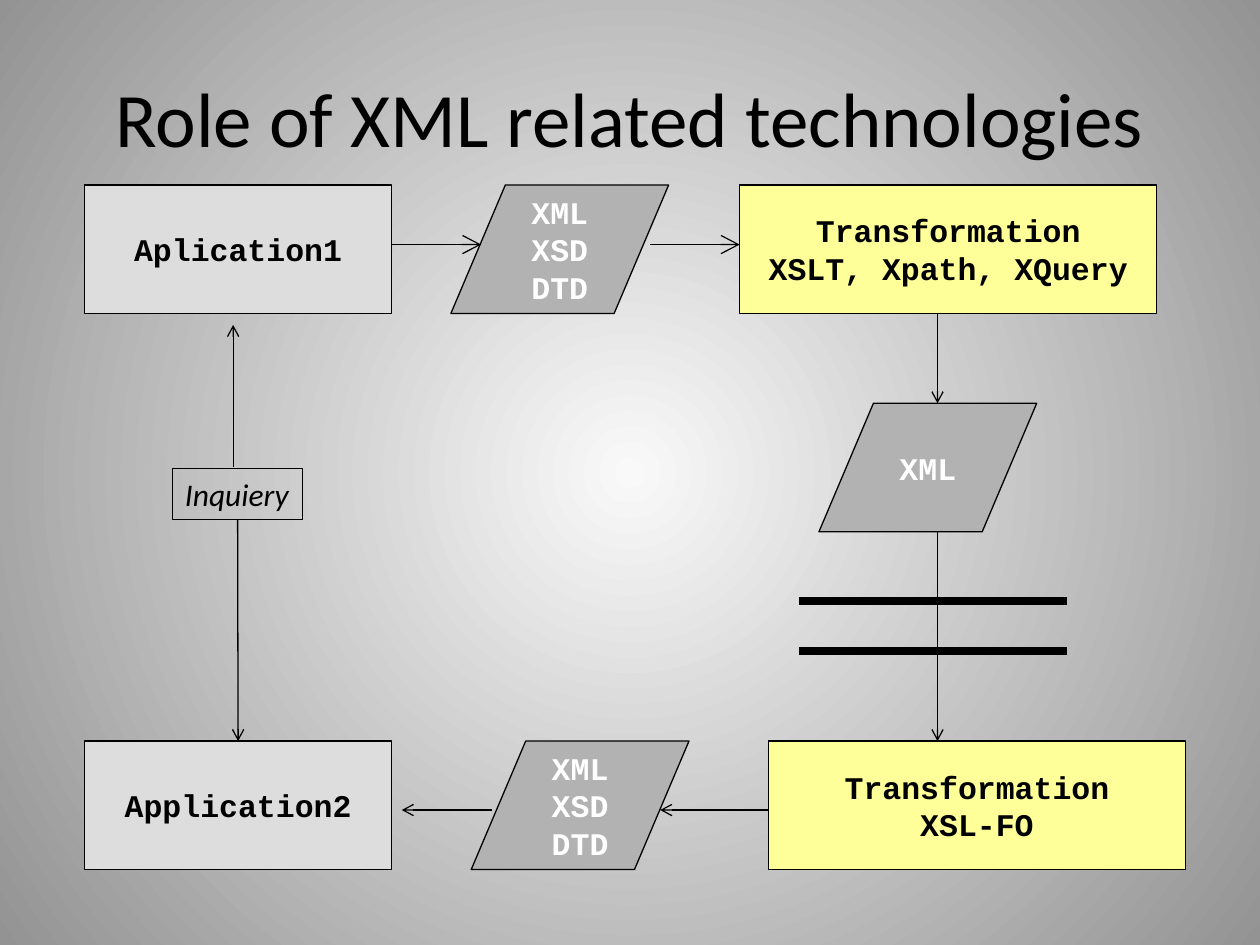
from lxml import etree
from pptx import Presentation
from pptx.dml.color import RGBColor
from pptx.enum.shapes import MSO_CONNECTOR, MSO_SHAPE
from pptx.enum.text import MSO_ANCHOR, MSO_AUTO_SIZE, PP_ALIGN
from pptx.oxml.ns import qn
from pptx.util import Cm, Pt

RECTANGLE = MSO_SHAPE.RECTANGLE
PARALLELOGRAM = MSO_SHAPE.PARALLELOGRAM
STRAIGHT = MSO_CONNECTOR.STRAIGHT
MIDDLE, TOP = MSO_ANCHOR.MIDDLE, MSO_ANCHOR.TOP
CENTER, LEFT = PP_ALIGN.CENTER, PP_ALIGN.LEFT
FIT_SHAPE = MSO_AUTO_SIZE.SHAPE_TO_FIT_TEXT

BLACK, WHITE = "000000", "FFFFFF"
APPLICATION_GRAY, DATA_GRAY, TRANSFORM_YELLOW = "DDDDDD", "B2B2B2", "FFFF99"
THIN, THICK = 0.75, 4.5

# Lengths in centimetres
NODE_HEIGHT = 2.59
APPLICATION_WIDTH, DATA_WIDTH, TRANSFORM_WIDTH = 6.2, 4.39, 8.41
APPLICATION_LEFT = 1.7
TOP_ROW, DATA_ROW, BOTTOM_ROW = 3.73, 8.13, 14.94
TOP_FLOW, BOTTOM_FLOW, DOWN_FLOW = 4.93, 16.33, 18.9


def rgb(value):
    return RGBColor.from_string(value)


def format_text(frame, font, size, color, align, anchor, bold=False, italic=False):
    frame.vertical_anchor = anchor
    for paragraph in frame.paragraphs:
        paragraph.alignment = align
        for run in paragraph.runs:
            run.font.name = font
            run.font.size = Pt(size)
            run.font.bold = bold
            run.font.italic = italic
            run.font.color.rgb = rgb(color)


def set_background(slide, center, edge):
    """Circular gradient running from the middle of the slide outwards."""
    fill = slide.background.fill
    fill.gradient()
    for stop, color, position in zip(fill.gradient_stops, (center, edge), (0, 1)):
        stop.color.rgb = rgb(color)
        stop.position = position
    gradient = slide.element.find(".//" + qn("a:gradFill"))
    gradient.remove(gradient.find(qn("a:lin")))
    path = etree.SubElement(gradient, qn("a:path"), path="circle")
    etree.SubElement(path, qn("a:fillToRect"), l="50000", t="50000", r="50000", b="50000")


def set_title(slide, text):
    title = slide.shapes.title
    title.left, title.top = Cm(1.27), Cm(0.76)
    title.width, title.height = Cm(22.86), Cm(3.18)
    title.text_frame.text = text
    format_text(title.text_frame, "Calibri", 44, BLACK, CENTER, MIDDLE)


def add_box(slide, geometry, left, top, width, height, text, fill=None):
    box = slide.shapes.add_shape(geometry, Cm(left), Cm(top), Cm(width), Cm(height))
    box.shadow.inherit = False
    if fill:
        box.fill.solid()
        box.fill.fore_color.rgb = rgb(fill)
    else:
        box.fill.background()
    box.line.color.rgb = rgb(BLACK)
    box.line.width = Pt(THIN)
    box.text_frame.word_wrap = False
    box.text_frame.text = text
    return box


def add_node(slide, geometry, left, top, width, text, fill, color=BLACK):
    node = add_box(slide, geometry, left, top, width, NODE_HEIGHT, text, fill)
    format_text(node.text_frame, "Courier New", 18, color, CENTER, MIDDLE, bold=True)
    return node


def add_application(slide, top, text):
    return add_node(slide, RECTANGLE, APPLICATION_LEFT, top, APPLICATION_WIDTH,
                    text, APPLICATION_GRAY)


def add_transformation(slide, left, top, text):
    add_node(slide, RECTANGLE, left, top, TRANSFORM_WIDTH, text, TRANSFORM_YELLOW)


def add_data(slide, left, top, text):
    data = add_node(slide, PARALLELOGRAM, left, top, DATA_WIDTH, text, DATA_GRAY, WHITE)
    data.adjustments[0] = 0.424


def add_inquiry(slide):
    inquiry = add_box(slide, RECTANGLE, 3.48, 9.45, 2.62, 1.02, "Inquiery")
    inquiry.text_frame.auto_size = FIT_SHAPE
    format_text(inquiry.text_frame, "Calibri", 18, BLACK, LEFT, TOP, italic=True)
    return inquiry


def add_line(slide, x1, y1, x2, y2, width=THIN):
    line = slide.shapes.add_connector(STRAIGHT, Cm(x1), Cm(y1), Cm(x2), Cm(y2))
    line.line.color.rgb = rgb(BLACK)
    line.line.width = Pt(width)
    etree.SubElement(line.element.spPr, qn("a:effectLst"))
    return line


def add_arrow(slide, x1, y1, x2, y2, head="med"):
    arrow = add_line(slide, x1, y1, x2, y2)
    outline = arrow.element.spPr.find(qn("a:ln"))
    etree.SubElement(outline, qn("a:tailEnd"), type="arrow", w=head, len=head)
    return arrow


def main():
    prs = Presentation()
    prs.slide_width, prs.slide_height = Cm(25.4), Cm(19.05)
    slide = prs.slides.add_slide(prs.slide_layouts[5])
    set_background(slide, "F9F9F9", "939393")
    set_title(slide, "Role of XML related technologies")

    # Top row: first application to transformation
    add_application(slide, TOP_ROW, "Aplication1")
    add_data(slide, 9.09, TOP_ROW, "XML\nXSD\nDTD")
    add_transformation(slide, 14.91, TOP_ROW, "Transformation\nXSLT, Xpath, XQuery")
    for start, end in ((7.9, 9.7), (13.11, 14.91)):
        add_arrow(slide, start, TOP_FLOW, end, TOP_FLOW, head="lg")

    # Right side: XML passes down through the double bar
    add_data(slide, 16.51, DATA_ROW, "XML")
    add_arrow(slide, DOWN_FLOW, TOP_ROW + NODE_HEIGHT, DOWN_FLOW, DATA_ROW)
    for bar in (12.12, 13.13):
        add_line(slide, 16.1, bar, 21.51, bar, THICK)
    add_arrow(slide, DOWN_FLOW, DATA_ROW + NODE_HEIGHT, DOWN_FLOW, BOTTOM_ROW)

    # Bottom row: transformation back to second application
    add_transformation(slide, 15.49, BOTTOM_ROW, "Transformation\nXSL-FO")
    add_data(slide, 9.5, BOTTOM_ROW, "XML\nXSD\nDTD")
    application2 = add_application(slide, BOTTOM_ROW, "Application2")
    for start, end in ((15.49, 13.31), (9.91, 8.1)):
        add_arrow(slide, start, BOTTOM_FLOW, end, BOTTOM_FLOW)

    # Left side: inquiry between the applications
    inquiry = add_inquiry(slide)
    add_arrow(slide, 4.7, 9.42, 4.7, 6.55)
    inquiry_down = add_arrow(slide, 4.8, 10.47, 4.8, BOTTOM_ROW)
    inquiry_down.begin_connect(inquiry, 2)
    inquiry_down.end_connect(application2, 0)

    prs.save("out.pptx")


if __name__ == "__main__":
    main()
